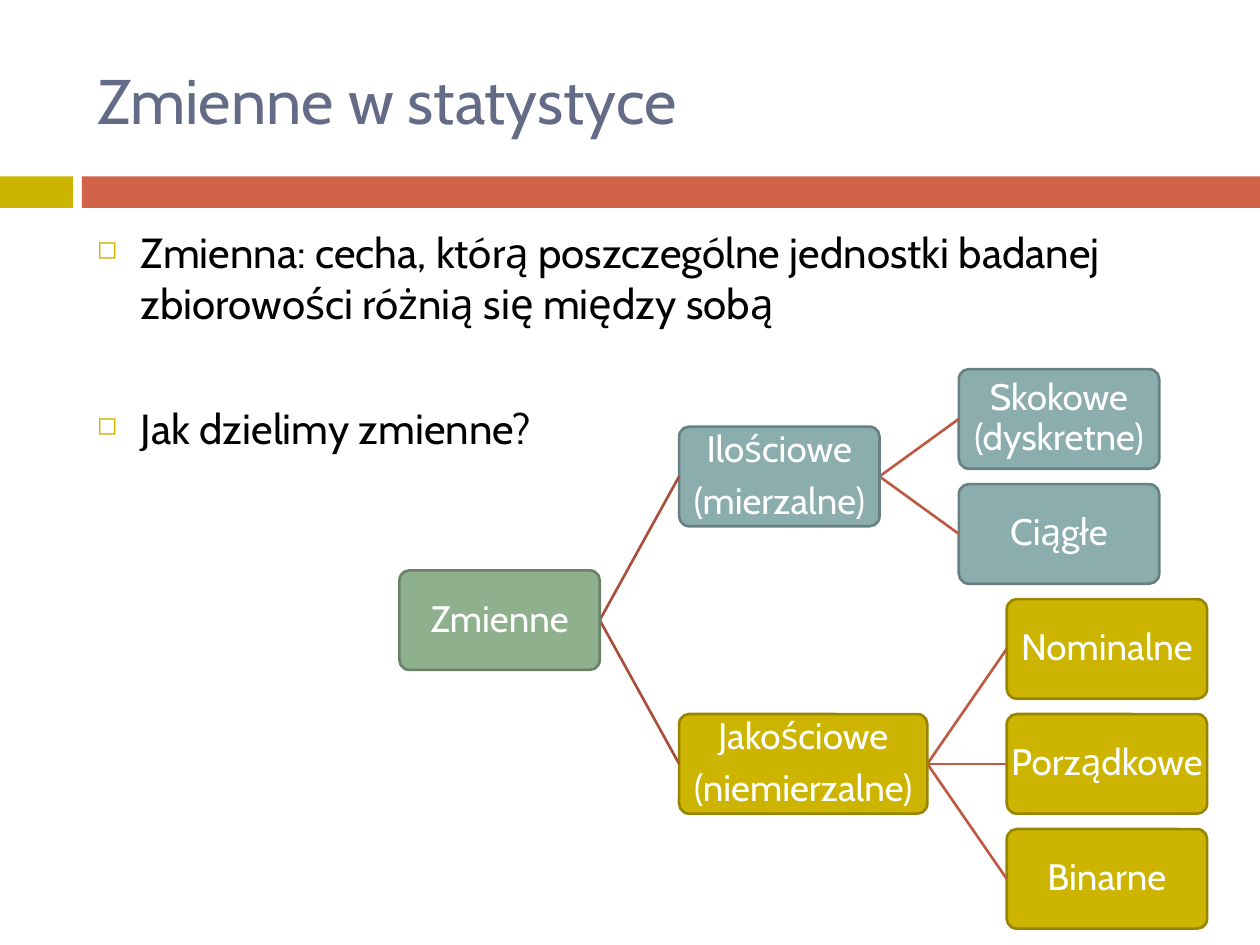
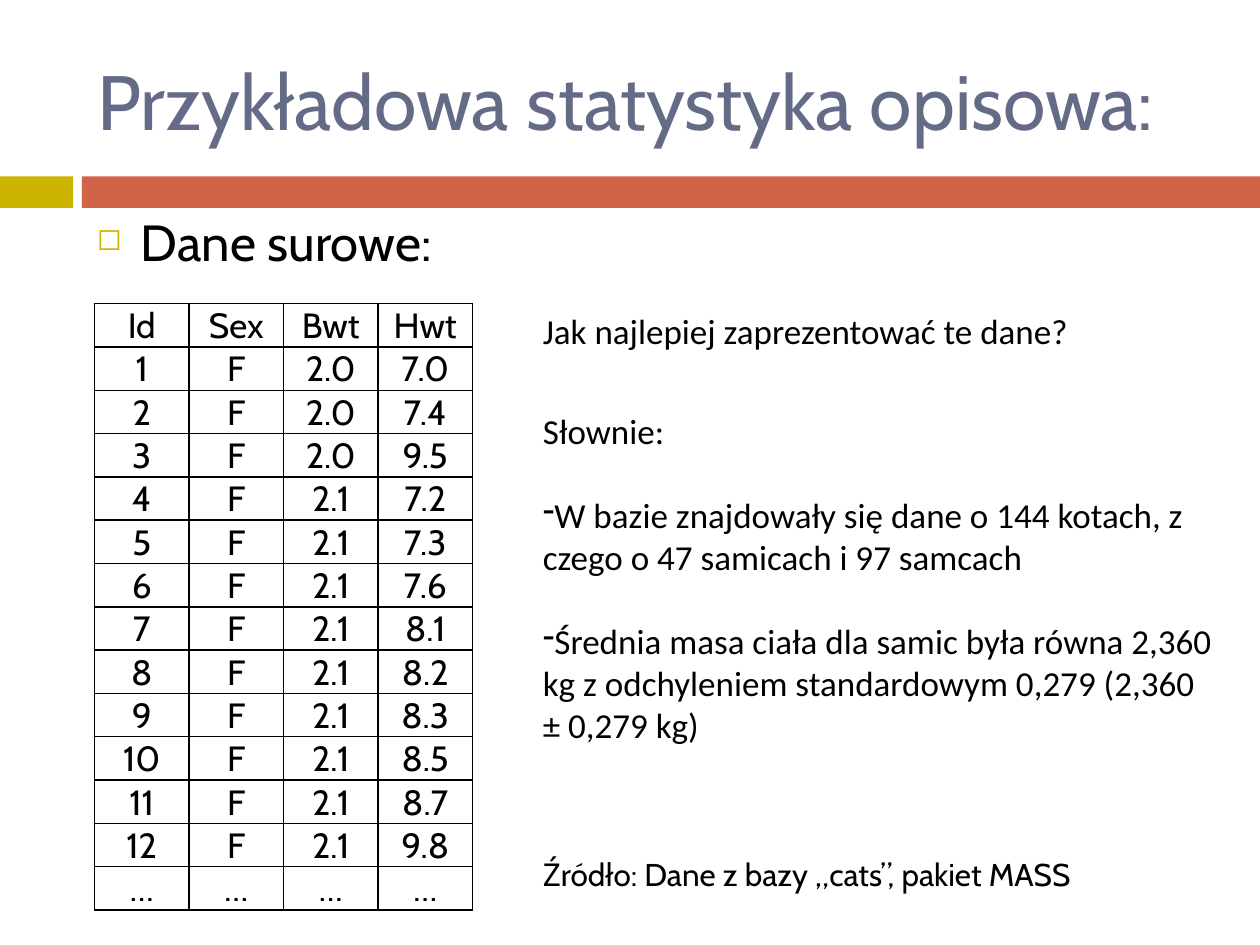
from dataclasses import dataclass
from itertools import count

from lxml.etree import SubElement
from pptx import Presentation
from pptx.dml.color import RGBColor
from pptx.enum.shapes import MSO_CONNECTOR as CONN, MSO_SHAPE as SHAPE
from pptx.enum.text import MSO_ANCHOR as ANCHOR, MSO_AUTO_SIZE as AUTO, PP_ALIGN as ALIGN
from pptx.oxml import parse_xml
from pptx.oxml.ns import nsdecls, qn
from pptx.util import Inches, Pt


@dataclass(frozen=True)
class Theme:
    heading: str = "Cabin"
    plain: str = "Calibri"
    title: str = "646B86"
    ink: str = "000000"
    light: str = "FFFFFF"
    gold: str = "CCB400"
    gold_edge: str = "978500"
    red: str = "D16349"
    green: str = "8FB08C"
    green_edge: str = "6A8268"
    teal: str = "8CADAE"
    teal_edge: str = "688081"
    branches: tuple = ("A74F3A", "BE5A42")
    title_size: int = 36
    big_title_size: int = 44
    bullet_size: int = 24
    big_bullet_size: int = 29
    node_size: int = 21
    text_size: int = 20
    source_size: int = 18


T = Theme()
NODE_H = 0.79
NODE_GAP = 0.63
LEAF_TOP = 2.93
LEAF_STEP = 0.9125


@dataclass
class Node:
    lines: tuple
    fill: str
    edge: str
    width: float = 1.59
    children: tuple = ()


def rgb(value):
    return RGBColor.from_string(value)


def style(p, size, color=T.ink, font=T.heading):
    for r in p.runs:
        r.font.size = Pt(size)
        r.font.name = font
        r.font.color.rgb = rgb(color)


def add_block(s, kind, x, y, w, h, fill, edge=None):
    sp = s.shapes.add_shape(kind, Inches(x), Inches(y), Inches(w), Inches(h))
    sp.shadow.inherit = False
    sp.fill.solid()
    sp.fill.fore_color.rgb = rgb(fill)
    if edge:
        sp.line.color.rgb = rgb(edge)
        sp.line.width = Pt(1.5)
    else:
        sp.line.fill.background()
    return sp


def add_slide(prs, title, size):
    s = prs.slides.add_slide(prs.slide_layouts[5])
    add_block(s, SHAPE.RECTANGLE, 0, 1.4, 0.58, 0.25, T.gold)
    add_block(s, SHAPE.RECTANGLE, 0.65, 1.4, 9.35, 0.25, T.red)
    sp = s.shapes.title
    sp.left, sp.top, sp.width, sp.height = map(Inches, (0.67, 0.25, 8.92, 1.08))
    tf = sp.text_frame
    tf.text = title
    tf.auto_size = AUTO.NONE
    tf.vertical_anchor = ANCHOR.MIDDLE
    tf.paragraphs[0].alignment = ALIGN.LEFT
    style(tf.paragraphs[0], size, T.title)
    return s


def add_text(s, x, y, w, h, lines, size, font=T.heading, gap=0):
    tf = s.shapes.add_textbox(Inches(x), Inches(y), Inches(w), Inches(h)).text_frame
    tf.word_wrap = True
    tf.text = "\n".join(lines)
    for i, p in enumerate(tf.paragraphs):
        if i:
            p.space_before = Pt(gap)
        style(p, size, font=font)
    return tf


def set_bullet(p, char, color=None, percent=100, indent=0):
    pPr = p._p.get_or_add_pPr()
    pPr.set("marL", str(Inches(indent)))
    pPr.set("indent", str(-Inches(indent)))
    if color:
        SubElement(SubElement(pPr, qn("a:buClr")), qn("a:srgbClr"), val=color)
    SubElement(pPr, qn("a:buSzPct"), val=str(percent * 1000))
    SubElement(pPr, qn("a:buChar"), char=char)


def add_bullets(s, y, h, lines, size, gap=0):
    tf = add_text(s, 0.67, y, 8.92, h, lines, size, gap=gap)
    for p in tf.paragraphs:
        set_bullet(p, "◻", T.gold, 60, 0.35)


def add_branch(s, x1, y1, x2, y2, color):
    c = s.shapes.add_connector(CONN.STRAIGHT, Inches(x1), Inches(y1), Inches(x2), Inches(y2))
    c.line.color.rgb = rgb(color)
    c.line.width = Pt(1.5)
    SubElement(c._element.spPr, qn("a:effectLst"))


def add_node(s, node, x, middle):
    sp = add_block(s, SHAPE.ROUNDED_RECTANGLE, x, middle - NODE_H / 2,
                   node.width, NODE_H, node.fill, node.edge)
    sp.adjustments[0] = 0.1
    tf = sp.text_frame
    tf.margin_left = tf.margin_right = tf.margin_top = tf.margin_bottom = 0
    tf.word_wrap = True
    tf.vertical_anchor = ANCHOR.MIDDLE
    tf.text = "\n".join(node.lines)
    for i, p in enumerate(tf.paragraphs):
        p.alignment = ALIGN.CENTER
        p.line_spacing = 0.9
        if i:
            p.space_before = Pt(7)
        style(p, T.node_size, T.light)


def add_tree(s, node, x, leaves, depth=0):
    right = x + node.width
    child_x = right + NODE_GAP
    ends = [add_tree(s, child, child_x, leaves, depth + 1) for child in node.children]
    if ends:
        middle = (ends[0] + ends[-1]) / 2
    else:
        middle = LEAF_TOP + NODE_H / 2 + LEAF_STEP * next(leaves)
    for end in ends:
        add_branch(s, right, middle, child_x, end, T.branches[depth])
    add_node(s, node, x, middle)
    return middle


def set_borders(cell):
    tcPr = cell._tc.get_or_add_tcPr()
    for i, side in enumerate("LRTB"):
        tcPr.insert(i, parse_xml(
            f'<a:ln{side} {nsdecls("a")} w="{Pt(1)}"><a:solidFill>'
            f'<a:srgbClr val="{T.ink}"/></a:solidFill></a:ln{side}>'))


def add_data_table(s, x, y, w, h, rows):
    table = s.shapes.add_table(len(rows), len(rows[0]), Inches(x), Inches(y),
                               Inches(w), Inches(h)).table
    table.first_row = table.horz_banding = False
    for i, values in enumerate(rows):
        for j, value in enumerate(values):
            cell = table.cell(i, j)
            cell.fill.background()
            set_borders(cell)
            cell.margin_left = cell.margin_right = cell.margin_top = Inches(0.01)
            cell.margin_bottom = 0
            cell.vertical_anchor = ANCHOR.BOTTOM
            p = cell.text_frame.paragraphs[0]
            p.text = value
            p.alignment = ALIGN.CENTER
            style(p, T.text_size)


def variables_slide(prs):
    s = add_slide(prs, "Zmienne w statystyce", T.title_size)
    add_bullets(s, 1.75, 5.23, [
        "Zmienna: cecha, którą poszczególne jednostki badanej zbiorowości różnią się między sobą",
        "Jak dzielimy zmienne?",
    ], T.bullet_size, gap=43)
    teal, gold = (T.teal, T.teal_edge), (T.gold, T.gold_edge)
    quantitative = Node(("Ilościowe", "(mierzalne)"), *teal, children=tuple(
        Node((name,), *teal) for name in ("Skokowe (dyskretne)", "Ciągłe")))
    qualitative = Node(("Jakościowe", "(niemierzalne)"), *gold, width=1.97, children=tuple(
        Node((name,), *gold) for name in ("Nominalne", "Porządkowe", "Binarne")))
    root = Node(("Zmienne",), T.green, T.green_edge, children=(quantitative, qualitative))
    add_tree(s, root, 3.17, count())


def data_slide(prs):
    s = add_slide(prs, "Przykładowa statystyka opisowa:", T.big_title_size)
    add_bullets(s, 1.62, 0.82, ["Dane surowe:"], T.big_bullet_size)
    body_weights = ["2.0"] * 3 + ["2.1"] * 9
    heart_weights = "7.0 7.4 9.5 7.2 7.3 7.6 8.1 8.2 8.3 8.5 8.7 9.8".split()
    cats = [(str(i), "F", bwt, hwt)
            for i, (bwt, hwt) in enumerate(zip(body_weights, heart_weights), 1)]
    add_data_table(s, 0.75, 2.41, 3, 4.81, [("Id", "Sex", "Bwt", "Hwt"), *cats, ("…",) * 4])
    add_text(s, 4.21, 2.41, 4.8, 0.44, ["Jak najlepiej zaprezentować te dane?"],
             T.text_size, T.plain)
    tf = add_text(s, 4.21, 3.2, 5.51, 2.79, [
        "Słownie:",
        "W bazie znajdowały się dane o 144 kotach, z czego o 47 samicach i 97 samcach",
        "Średnia masa ciała dla samic była równa 2,360 kg z odchyleniem standardowym 0,279 "
        "(2,360 ± 0,279 kg)",
    ], T.text_size, T.plain, gap=24)
    for p in tf.paragraphs[1:]:
        set_bullet(p, "-")
    add_text(s, 4.21, 6.74, 4.96, 0.4, ["Źródło: Dane z bazy „cats”, pakiet MASS"],
             T.source_size)


def main():
    prs = Presentation()
    prs.slide_width, prs.slide_height = Inches(10), Inches(7.5)
    variables_slide(prs)
    data_slide(prs)
    prs.save("out.pptx")


if __name__ == "__main__":
    main()
